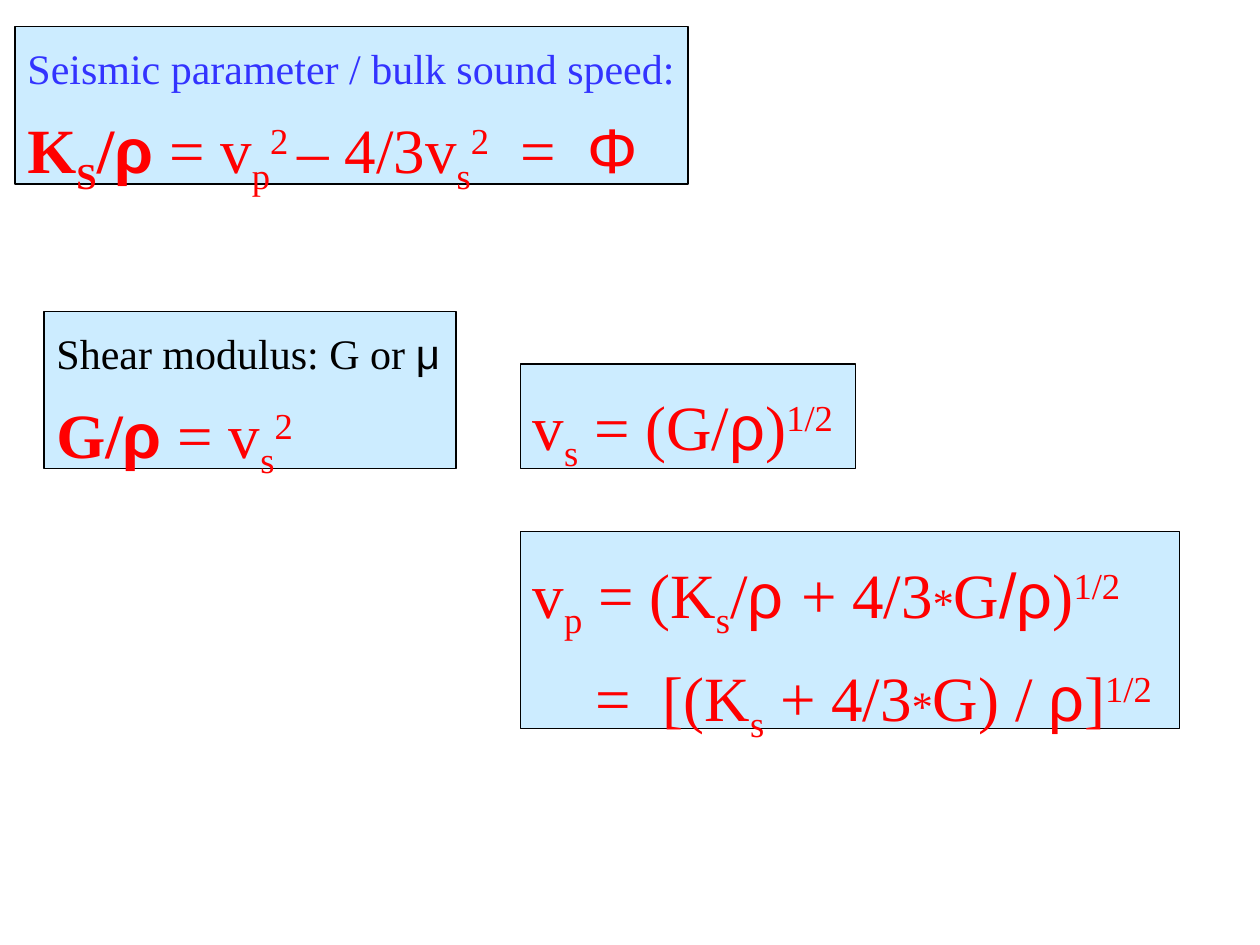
import dataclasses

import pptx
import pptx.dml.color
import pptx.enum.shapes
import pptx.enum.text
import pptx.util

Inches = pptx.util.Inches
Pt = pptx.util.Pt


@dataclasses.dataclass(frozen=True)
class Theme:
    panel: str = "CCECFF"
    ink: str = "000000"
    heading: str = "3333FF"
    formula: str = "FF0000"
    serif: str = "Times New Roman"
    greek: str = "Arial"
    small: int = 24
    large: int = 36
    outline: float = 0.75
    spacing: float = 1.2
    sub: int = -25
    sup: int = 30


def rgb(value):
    return pptx.dml.color.RGBColor.from_string(value)


def add_run(p, text, *, size, font, color, bold=False, base=0):
    """Add one run; base is the baseline shift in percent."""
    r = p.add_run()
    r.text = text
    r.font.size = Pt(size)
    r.font.name = font
    r.font.bold = bold
    r.font.color.rgb = rgb(color)
    if base:
        r.font._element.set("baseline", str(base * 1000))


class SlideBuilder:
    def __init__(self, s, theme):
        self.s = s
        self.theme = theme

    def box(self, left, top, width, height, wrap=False):
        """Draw an outlined panel and return its text frame."""
        t = self.theme
        sp = self.s.shapes.add_shape(
            pptx.enum.shapes.MSO_SHAPE.RECTANGLE,
            Inches(left), Inches(top), Inches(width), Inches(height))
        sp.shadow.inherit = False
        sp.fill.solid()
        sp.fill.fore_color.rgb = rgb(t.panel)
        sp.line.color.rgb = rgb(t.ink)
        sp.line.width = Pt(t.outline)
        tf = sp.text_frame
        tf.word_wrap = wrap
        tf.auto_size = pptx.enum.text.MSO_AUTO_SIZE.SHAPE_TO_FIT_TEXT
        tf.vertical_anchor = pptx.enum.text.MSO_ANCHOR.TOP
        return tf

    def paragraph(self, tf, indent=0):
        """Use the first paragraph while it is empty, then add more."""
        first = tf.paragraphs[0]
        p = tf.add_paragraph() if first.runs else first
        p.alignment = pptx.enum.text.PP_ALIGN.LEFT
        p.line_spacing = self.theme.spacing
        if indent:
            p._p.get_or_add_pPr().set("marL", str(Inches(indent)))
        return p

    def label(self, tf, text, color, symbol=""):
        t = self.theme
        p = self.paragraph(tf)
        add_run(p, text, size=t.small, font=t.serif, color=color)
        if symbol:
            add_run(p, symbol, size=t.small, font=t.greek, color=color)

    def formula(self, tf, *parts, indent=0):
        """Each part is plain text or a (text, format changes) pair."""
        t = self.theme
        p = self.paragraph(tf, indent)
        normal = dict(size=t.large, font=t.serif, color=t.formula)
        for part in parts:
            text, changes = (part, {}) if isinstance(part, str) else part
            add_run(p, text, **{**normal, **changes})


def main():
    prs = pptx.Presentation()
    prs.slide_width, prs.slide_height = Inches(10), Inches(7.5)
    theme = Theme()
    slide = SlideBuilder(prs.slides.add_slide(prs.slide_layouts[6]), theme)

    # Formats that recur in the formulas
    sub = dict(base=theme.sub)
    sup = dict(base=theme.sup)
    greek = dict(font=theme.greek)
    bold = dict(bold=True)
    bold_rho = ("ρ", {**greek, **bold})
    rho = ("ρ", greek)
    sub_s = ("s", sub)
    times = ("*", dict(size=theme.small))
    root = ("1/2", sup)

    # Seismic parameter
    tf = slide.box(0.12, 0.21, 5.34, 1.25, wrap=True)
    slide.label(tf, "Seismic parameter / bulk sound speed:", theme.heading)
    slide.formula(tf, ("K", bold), ("S", {**sub, **bold}), ("/", bold), bold_rho,
                  " = v", ("p", sub), ("2 ", sup), "– 4/3v", sub_s, ("2", sup),
                  "  =  ", ("Φ", greek))

    # Shear modulus
    tf = slide.box(0.35, 2.47, 3.27, 1.25)
    slide.label(tf, "Shear modulus: G or ", theme.ink, symbol="μ")
    slide.formula(tf, ("G/", bold), bold_rho, " = v", sub_s, ("2", sup))

    # Shear wave speed
    tf = slide.box(4.13, 2.89, 2.66, 0.83)
    slide.formula(tf, "v", sub_s, " = (G/", rho, ")", root)

    # Compressional wave speed
    tf = slide.box(4.13, 4.22, 5.23, 1.56)
    slide.formula(tf, "v", ("p", sub), " = (K", sub_s, "/", ("ρ ", greek),
                  "+ 4/3", times, "G", ("/ρ", greek), ")", root)
    slide.formula(tf, "=  [(K", sub_s, " + 4/3", times, "G) / ", rho, "]", root,
                  indent=0.5)

    prs.save("out.pptx")


if __name__ == "__main__":
    main()
